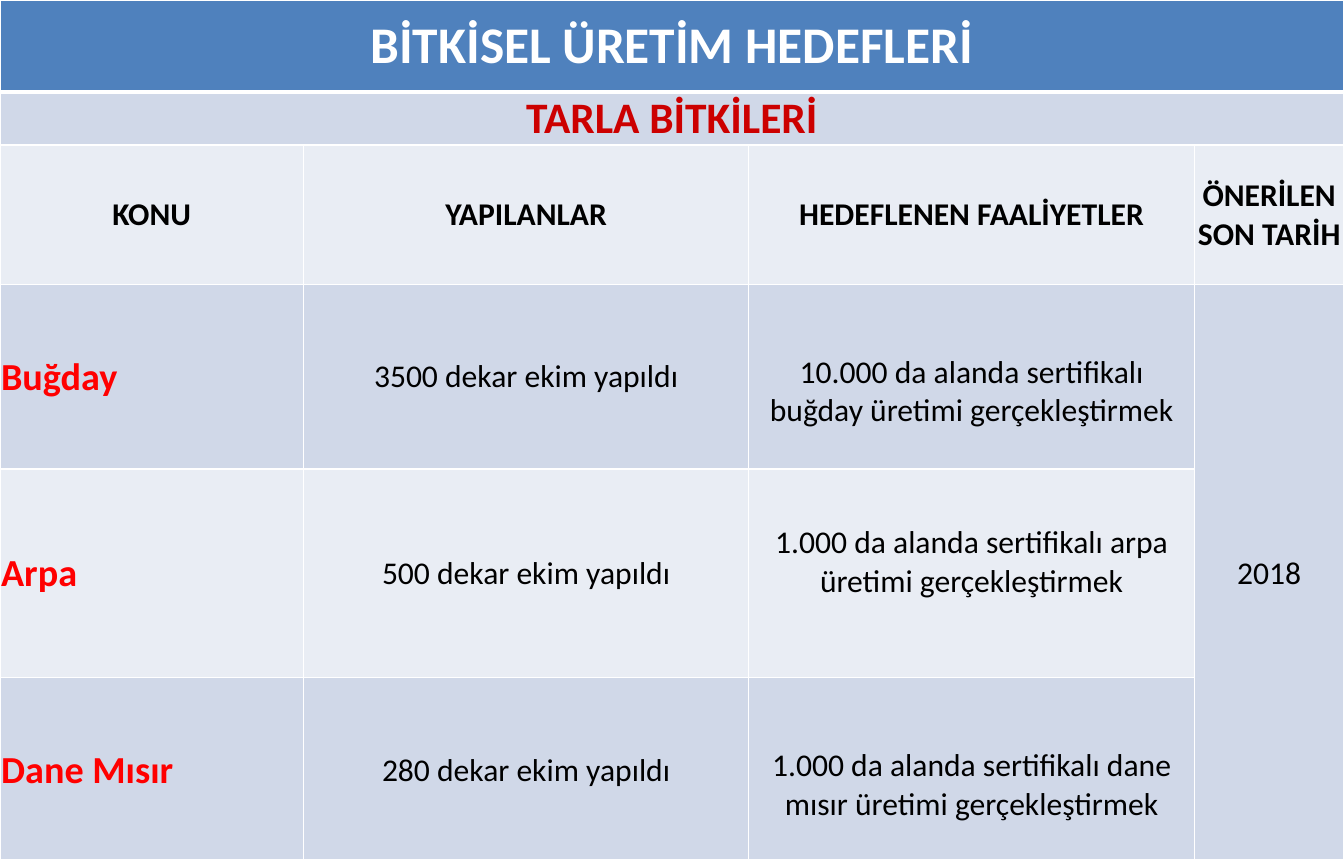
"""Build the slide with the table of crop production targets."""
from dataclasses import dataclass

from lxml.etree import SubElement
from pptx import Presentation
from pptx.dml.color import RGBColor
from pptx.enum.text import MSO_ANCHOR as Anchor, PP_ALIGN as Align
from pptx.oxml.ns import qn
from pptx.table import Table, _Cell as Cell
from pptx.util import Cm, Pt

WHITE = RGBColor(0xFF, 0xFF, 0xFF)
BLACK = RGBColor(0x00, 0x00, 0x00)
RED = RGBColor(0xFF, 0x00, 0x00)
DARK_RED = RGBColor(0xCC, 0x00, 0x00)
BLUE = RGBColor(0x4F, 0x81, 0xBD)
BAND_DARK = RGBColor(0xD0, 0xD8, 0xE8)
BAND_LIGHT = RGBColor(0xE9, 0xED, 0xF4)
BACKGROUND = RGBColor(0xEE, 0xEC, 0xE1)

COLUMN_WIDTHS = (8.13, 11.94, 11.94, 4.01)
ROW_HEIGHTS = (2.46, 1.3, 3.73, 4.95, 5.59, 4.95)
ROW_FILLS = (BLUE, BAND_DARK, BAND_LIGHT, BAND_DARK, BAND_LIGHT, BAND_DARK)
HEADINGS = ("KONU", "YAPILANLAR", "HEDEFLENEN FAALİYETLER", "ÖNERİLEN SON TARİH")
FIRST_CROP_ROW = 3
LINE_HEIGHT = 1.03


@dataclass(frozen=True)
class TextStyle:
    size: float
    color: RGBColor = BLACK
    bold: bool = True
    align: Align = Align.CENTER
    margin: float = 0.03


@dataclass(frozen=True)
class Crop:
    name: str
    done: str
    target: str
    lines_below: int


TITLE = TextStyle(39, WHITE, margin=0)
SUBTITLE = TextStyle(33, DARK_RED, margin=0)
HEADING = TextStyle(24)
CROP_NAME = TextStyle(29, RED, align=Align.LEFT)
BODY = TextStyle(24, bold=False)

CROPS = (
    Crop("Buğday", "3500 dekar ekim yapıldı",
         "10.000 da alanda sertifikalı buğday üretimi gerçekleştirmek", 1),
    Crop("Arpa", "500 dekar ekim yapıldı",
         "1.000 da alanda sertifikalı arpa üretimi gerçekleştirmek", 2),
    Crop("Dane Mısır", "280 dekar ekim yapıldı",
         "1.000 da alanda sertifikalı dane mısır üretimi gerçekleştirmek", 1),
)


def write(cell: Cell, text: str, style: TextStyle) -> None:
    cell.text = text
    cell.vertical_anchor = Anchor.MIDDLE
    cell.margin_left = cell.margin_right = cell.margin_top = Cm(style.margin)
    cell.margin_bottom = 0
    paragraph = cell.text_frame.paragraphs[0]
    paragraph.alignment = style.align
    font = paragraph.font
    font.name = "Calibri"
    font.size = Pt(style.size)
    font.bold = style.bold
    font.color.rgb = style.color


def draw_borders(cell: Cell, row: int) -> None:
    properties = cell._tc.get_or_add_tcPr()
    thick_side = {0: "lnB", 1: "lnT"}.get(row)
    for side in ("lnL", "lnR", "lnT", "lnB"):
        width = Pt(3 if side == thick_side else 1)
        line = SubElement(properties, qn(f"a:{side}"), w=str(width))
        fill = SubElement(line, qn("a:solidFill"))
        SubElement(fill, qn("a:srgbClr"), val=str(WHITE))


def format_grid(table: Table) -> None:
    table.first_row = table.horz_banding = False
    for column, width in zip(table.columns, COLUMN_WIDTHS):
        column.width = Cm(width)
    for index, (row, height) in enumerate(zip(table.rows, ROW_HEIGHTS)):
        row.height = Cm(height)
        for cell in row.cells:
            draw_borders(cell, index)
            cell.fill.solid()
            cell.fill.fore_color.rgb = ROW_FILLS[index]


def fill_table(table: Table) -> None:
    last_column = len(COLUMN_WIDTHS) - 1
    for row, (text, style) in enumerate((("BİTKİSEL ÜRETİM HEDEFLERİ", TITLE),
                                         ("TARLA BİTKİLERİ", SUBTITLE))):
        table.cell(row, 0).merge(table.cell(row, last_column))
        write(table.cell(row, 0), text, style)
    for column, heading in enumerate(HEADINGS):
        write(table.cell(2, column), heading, HEADING)
    for row, crop in enumerate(CROPS, FIRST_CROP_ROW):
        write(table.cell(row, 0), crop.name, CROP_NAME)
        write(table.cell(row, 1), crop.done, BODY)
        target = table.cell(row, 2)
        write(target, crop.target, BODY)
        target.vertical_anchor = Anchor.BOTTOM
        target.margin_bottom = Cm(crop.lines_below * LINE_HEIGHT)
    deadline = table.cell(FIRST_CROP_ROW, last_column)
    deadline.merge(table.cell(len(ROW_HEIGHTS) - 1, last_column))
    write(deadline, "2018", BODY)


def main() -> None:
    presentation = Presentation()
    presentation.slide_width = Cm(36.02)
    presentation.slide_height = Cm(23.01)
    slide = presentation.slides.add_slide(presentation.slide_layouts[6])
    slide.background.fill.solid()
    slide.background.fill.fore_color.rgb = BACKGROUND
    table = slide.shapes.add_table(
        len(ROW_HEIGHTS), len(COLUMN_WIDTHS), 0, 0,
        Cm(sum(COLUMN_WIDTHS)), Cm(sum(ROW_HEIGHTS))).table
    format_grid(table)
    fill_table(table)
    presentation.save("out.pptx")


if __name__ == "__main__":
    main()
